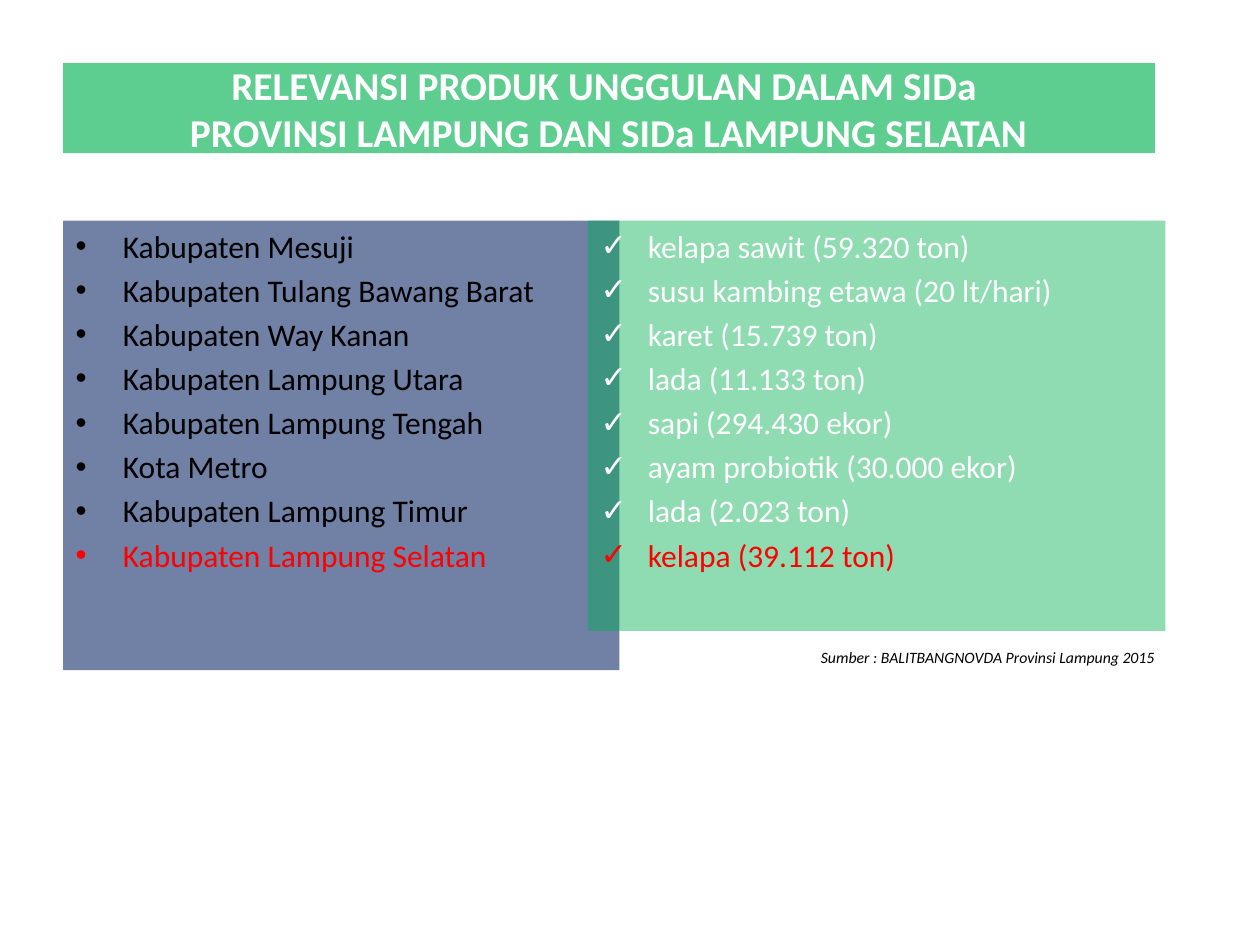
from lxml import etree
from pptx import Presentation
from pptx.dml.color import RGBColor
from pptx.enum import text
from pptx.oxml import ns
from pptx.util import Pt

COLORS = {"green": "00B050", "navy": "002060", "white": "FFFFFF",
          "black": "000000", "red": "FF0000"}
FONT = "Calibri"
INDENT = 27

# Each region and its leading product; the last row is highlighted
PRODUCTS = [
    ("Kabupaten Mesuji", "kelapa sawit (59.320 ton)"),
    ("Kabupaten Tulang Bawang Barat", "susu kambing etawa (20 lt/hari)"),
    ("Kabupaten Way Kanan", "karet (15.739 ton)"),
    ("Kabupaten Lampung Utara", "lada (11.133 ton)"),
    ("Kabupaten Lampung Tengah", "sapi (294.430 ekor)"),
    ("Kota Metro", "ayam probiotik (30.000 ekor)"),
    ("Kabupaten Lampung Timur", "lada (2.023 ton)"),
    ("Kabupaten Lampung Selatan", "kelapa (39.112 ton)"),
]


def place(s, box):
    s.left, s.top, s.width, s.height = (Pt(v) for v in box)


def fill_translucent(s, color, opacity):
    s.fill.solid()
    s.fill.fore_color.rgb = RGBColor.from_string(COLORS[color])
    clr = s._element.spPr.find(".//" + ns.qn("a:srgbClr"))
    etree.SubElement(clr, ns.qn("a:alpha"), val=str(opacity * 1000))


def style_runs(p, size, color, bold=False, italic=False):
    for r in p.runs:
        r.font.name = FONT
        r.font.size = Pt(size)
        r.font.bold = bold
        r.font.italic = italic
        r.font.color.rgb = RGBColor.from_string(COLORS[color])


def set_bullet(p, char):
    pPr = p._p.get_or_add_pPr()
    pPr.set("marL", str(Pt(INDENT)))
    pPr.set("indent", str(-Pt(INDENT)))
    etree.SubElement(pPr, ns.qn("a:buFont"), typeface="Arial")
    etree.SubElement(pPr, ns.qn("a:buChar"), char=char)


def add_title(s, box):
    place(s, box)
    fill_translucent(s, "green", 63)
    tf = s.text_frame
    tf.text = ("RELEVANSI PRODUK UNGGULAN DALAM SIDa \v"
               "PROVINSI LAMPUNG DAN SIDa LAMPUNG SELATAN")
    tf.auto_size = text.MSO_AUTO_SIZE.NONE
    tf.vertical_anchor = text.MSO_ANCHOR.MIDDLE
    p = tf.paragraphs[0]
    p.alignment = text.PP_ALIGN.CENTER
    style_runs(p, 22.5, "white", bold=True)


def add_list(s, box, items, bullet, color, fill, opacity):
    place(s, box)
    fill_translucent(s, fill, opacity)
    tf = s.text_frame
    tf.text = "\n".join(items)
    tf.auto_size = text.MSO_AUTO_SIZE.NONE
    for p in tf.paragraphs:
        set_bullet(p, bullet)
        style_runs(p, 18, color)
    style_runs(tf.paragraphs[-1], 18, "red")


def add_source(slide, box):
    tf = slide.shapes.add_textbox(*(Pt(v) for v in box)).text_frame
    tf.text = "Sumber : BALITBANGNOVDA Provinsi Lampung 2015"
    tf.word_wrap = False
    tf.auto_size = text.MSO_AUTO_SIZE.SHAPE_TO_FIT_TEXT
    tf.vertical_anchor = text.MSO_ANCHOR.MIDDLE
    p = tf.paragraphs[0]
    p.alignment = text.PP_ALIGN.JUSTIFY
    style_runs(p, 9, "black", italic=True)


def main():
    prs = Presentation()
    prs.slide_width, prs.slide_height = Pt(720), Pt(540)
    slide = prs.slides.add_slide(prs.slide_layouts[3])
    title, left, right = slide.placeholders
    regions, products = zip(*PRODUCTS)

    # Heading band
    add_title(title, (36, 36, 624, 51.6))
    # Regions and products, side by side with a slight overlap
    add_list(left, (36, 126, 318, 257), regions, "•", "black", "navy", 56)
    add_list(right, (336, 126, 330, 234.5), products, "✓", "white", "green", 44)
    # Source line
    add_source(slide, (462, 366.5, 206.5, 18))

    prs.save("out.pptx")


if __name__ == "__main__":
    main()
